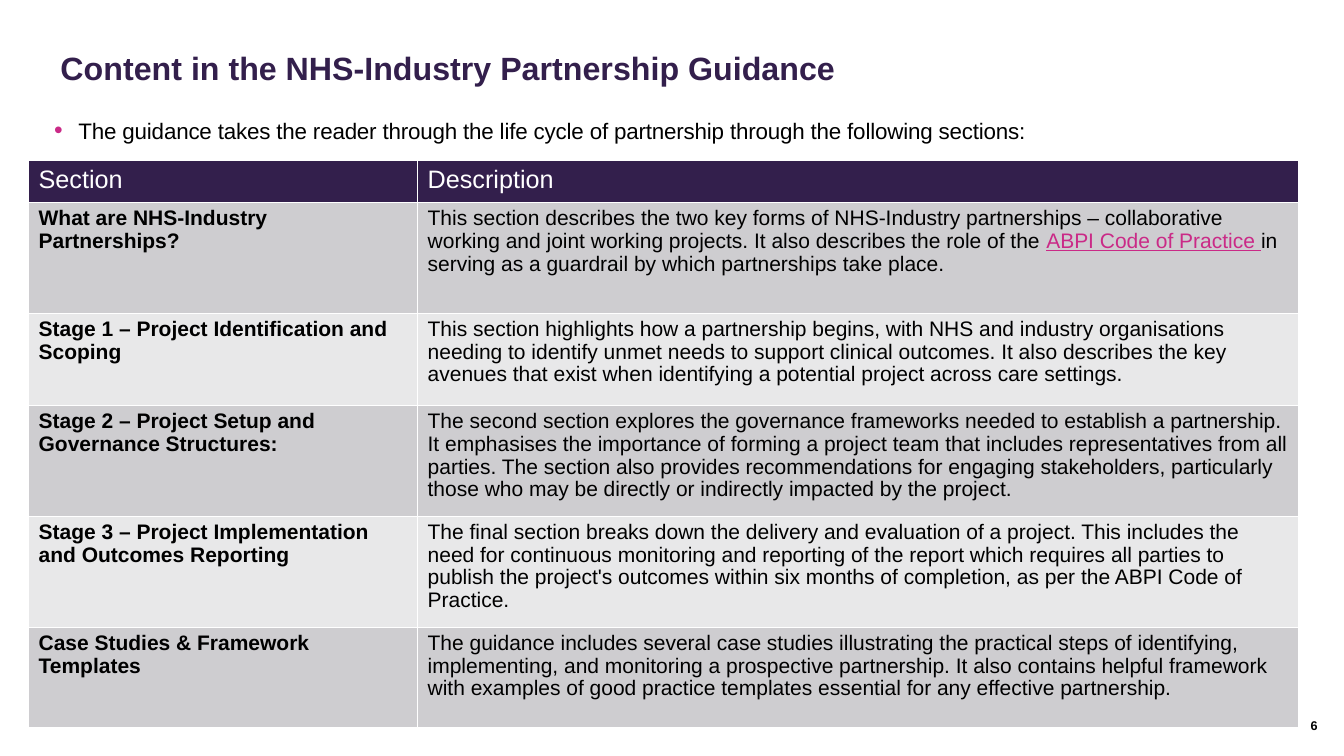
from dataclasses import dataclass

from lxml import etree
from pptx import Presentation
from pptx.dml.color import RGBColor
from pptx.enum.text import PP_ALIGN
from pptx.oxml.ns import qn
from pptx.util import Pt

RIGHT = PP_ALIGN.RIGHT


@dataclass(frozen=True)
class Theme:
    font: str = "Arial"
    purple: str = "331F4C"
    pink: str = "CA2A87"
    black: str = "000000"
    white: str = "FFFFFF"
    bands: tuple = ("CECDD0", "E8E8E9")
    title_size: int = 23
    intro_size: int = 16
    header_size: int = 18
    body_size: int = 15
    number_size: int = 9


theme = Theme()


def set_font(paragraph, size, color, bold=False):
    paragraph.font.name = theme.font
    paragraph.font.size = Pt(size)
    paragraph.font.bold = bold
    paragraph.font.color.rgb = RGBColor.from_string(color)


def add_text(slide, box, text, insets):
    frame = slide.shapes.add_textbox(*map(Pt, box)).text_frame
    frame.word_wrap = True
    (frame.margin_left, frame.margin_top,
     frame.margin_right, frame.margin_bottom) = map(Pt, insets)
    paragraph = frame.paragraphs[0]
    paragraph.add_run().text = text
    return paragraph


presentation = Presentation()
presentation.slide_width = Pt(960)
presentation.slide_height = Pt(540)
slide = presentation.slides.add_slide(presentation.slide_layouts[6])

# Title
title = add_text(slide, (43.2, 41, 780, 92),
                 "Content in the NHS-Industry Partnership Guidance", (0, 0, 0, 3.6))
title.line_spacing = Pt(21)
set_font(title, theme.title_size, theme.purple, bold=True)

# Slide number
number = add_text(slide, (848.2, 512.6, 92.9, 16.6), "6", (0, 0, 0, 3.6))
number.alignment = RIGHT
set_font(number, theme.number_size, theme.black, bold=True)

# Introductory bullet
intro = add_text(
    slide, (31.7, 79.9, 820, 48),
    "The guidance takes the reader through the life cycle of partnership "
    "through the following sections:", (7.2, 3.6, 7.2, 3.6))
properties = intro._p.get_or_add_pPr()
properties.set("marL", str(Pt(17.3)))
properties.set("indent", str(Pt(-17.3)))
bullet_color = etree.SubElement(properties, qn("a:buClr"))
etree.SubElement(bullet_color, qn("a:srgbClr"), val=theme.pink)
etree.SubElement(properties, qn("a:buSzPct"), val="110000")
etree.SubElement(properties, qn("a:buFont"), typeface=theme.font)
etree.SubElement(properties, qn("a:buChar"), char="•")
set_font(intro, theme.intro_size, theme.black)
intro.runs[0].font._element.set("spc", "-10")

# Table content; the linked phrase is kept apart from the text around it
link = "ABPI Code of Practice "
rows = [
    ("Section", "Description"),
    ("What are NHS-Industry Partnerships?",
     "This section describes the two key forms of NHS-Industry partnerships – "
     "collaborative working and joint working projects. It also describes the role "
     f"of the {link}in serving as a guardrail by which partnerships take place."),
    ("Stage 1 – Project Identification and Scoping",
     "This section highlights how a partnership begins, with NHS and industry "
     "organisations needing to identify unmet needs to support clinical outcomes. "
     "It also describes the key avenues that exist when identifying a potential "
     "project across care settings."),
    ("Stage 2 – Project Setup and Governance Structures:",
     "The second section explores the governance frameworks needed to establish a "
     "partnership. It emphasises the importance of forming a project team that "
     "includes representatives from all parties. The section also provides "
     "recommendations for engaging stakeholders, particularly those who may be "
     "directly or indirectly impacted by the project."),
    ("Stage 3 – Project Implementation and Outcomes Reporting",
     "The final section breaks down the delivery and evaluation of a project. This "
     "includes the need for continuous monitoring and reporting of the report which "
     "requires all parties to publish the project's outcomes within six months of "
     "completion, as per the ABPI Code of Practice."),
    ("Case Studies & Framework Templates",
     "The guidance includes several case studies illustrating the practical steps of "
     "identifying, implementing, and monitoring a prospective partnership. It also "
     "contains helpful framework with examples of good practice templates essential "
     "for any effective partnership."),
]
column_widths = (277.9, 629.6)
row_heights = (30.4, 79.2, 65.8, 79.2, 79.2, 71.6)

# Table
table = slide.shapes.add_table(
    len(rows), len(column_widths), Pt(20.4), Pt(114.4),
    Pt(sum(column_widths)), Pt(sum(row_heights))).table
for column, width in zip(table.columns, column_widths):
    column.width = Pt(width)

for row_index, (texts, height) in enumerate(zip(rows, row_heights)):
    table.rows[row_index].height = Pt(height)
    is_header = row_index == 0
    fill_color = theme.purple if is_header else theme.bands[(row_index - 1) % 2]
    for column_index, text in enumerate(texts):
        cell = table.cell(row_index, column_index)

        # White cell borders, then the fill
        cell_properties = cell._tc.get_or_add_tcPr()
        for side in ("lnL", "lnR", "lnT", "lnB"):
            border = etree.SubElement(cell_properties, qn(f"a:{side}"), w=str(Pt(1)))
            border_fill = etree.SubElement(border, qn("a:solidFill"))
            etree.SubElement(border_fill, qn("a:srgbClr"), val=theme.white)
        cell.fill.solid()
        cell.fill.fore_color.rgb = RGBColor.from_string(fill_color)

        # Cell text
        paragraph = cell.text_frame.paragraphs[0]
        for part in filter(None, text.partition(link)):
            run = paragraph.add_run()
            run.text = part
            if part == link:
                run.font.underline = True
                run.font.color.rgb = RGBColor.from_string(theme.pink)
        if is_header:
            set_font(paragraph, theme.header_size, theme.white)
        else:
            paragraph.line_spacing = 0.97
            set_font(paragraph, theme.body_size, theme.black, bold=column_index == 0)

presentation.save("out.pptx")
